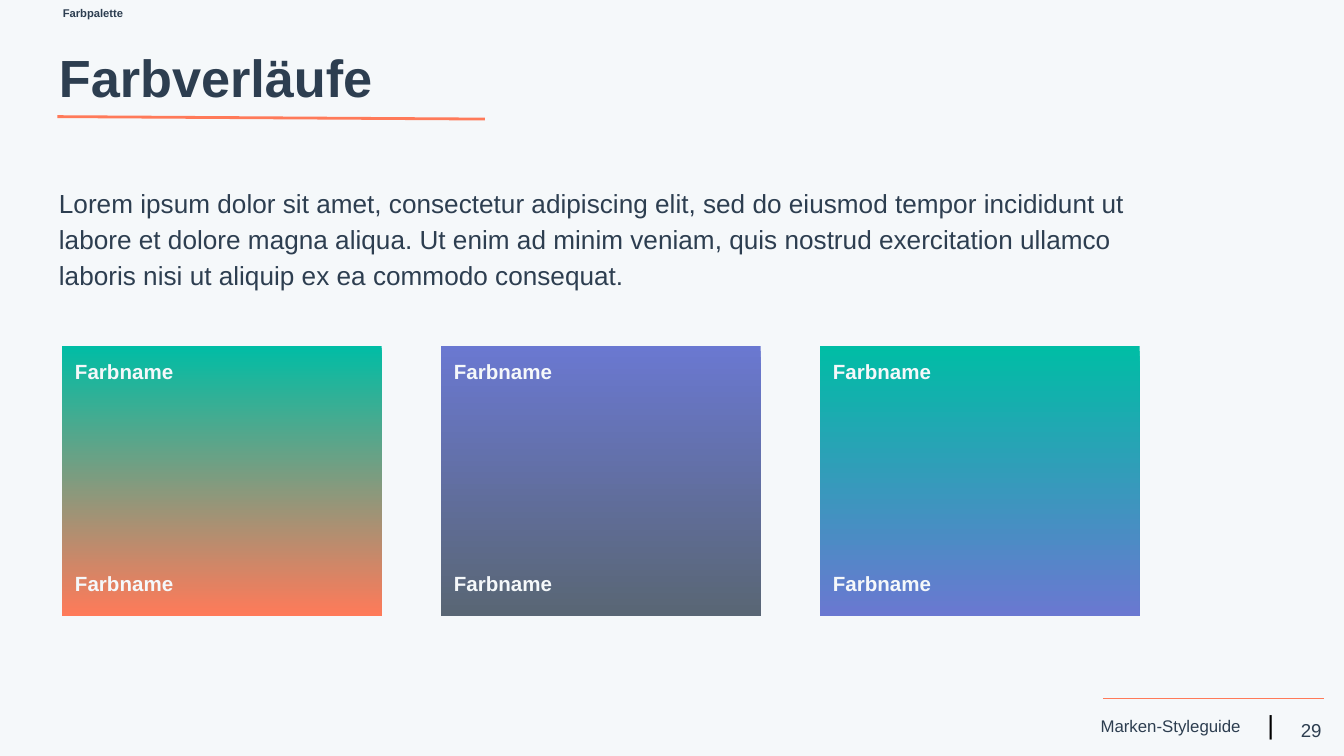
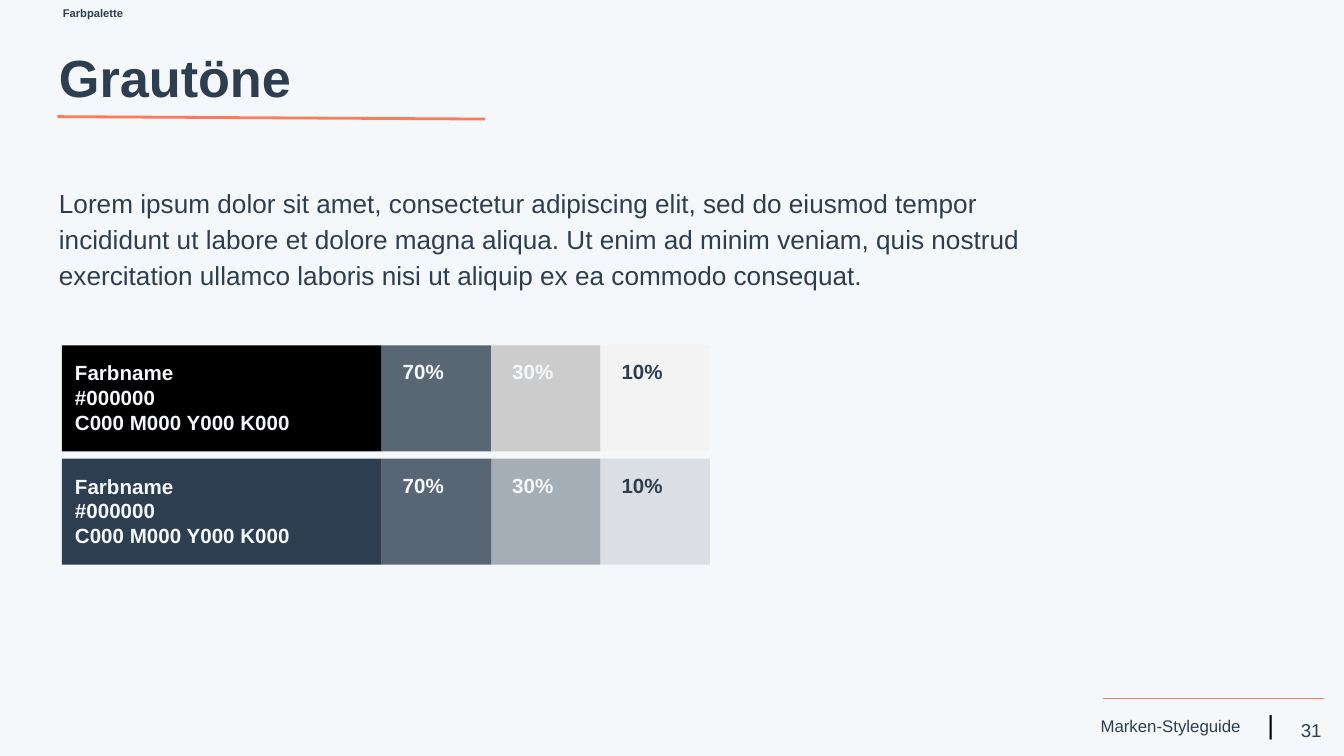
from pptx import Presentation
from pptx.dml.color import RGBColor
from pptx.enum.shapes import MSO_CONNECTOR, MSO_SHAPE
from pptx.enum.text import MSO_ANCHOR, PP_ALIGN
from pptx.oxml.ns import qn
from pptx.util import Pt
from lxml.etree import SubElement

rgb = RGBColor.from_string

FONT = "Arial"
PAPER = "F5F8FA"
NAVY = "2D3E50"
CORAL = "FF7A59"
TEAL = "00BDA5"
VIOLET = "6A78D1"
SLATE = "596674"
BLACK = "000000"

LOREM = (
    "Lorem ipsum dolor sit amet, consectetur adipiscing elit, sed do eiusmod tempor "
    "incididunt ut labore et dolore magna aliqua. Ut enim ad minim veniam, quis nostrud "
    "exercitation ullamco laboris nisi ut aliquip ex ea commodo consequat."
)
GRID_LEFT, GRID_TOP = 33.1, 185.1
SWATCH_WIDTH = 171.4
LABEL_WIDTH, LABEL_HEIGHT = 175.7, 31
LABEL_INSET = 0.8


def add_text(slide, lines, left, top, width, height, size, color=NAVY, bold=False,
             anchor=MSO_ANCHOR.TOP, align=PP_ALIGN.LEFT, spacing=1.0, after=0):
    shape = slide.shapes.add_textbox(Pt(left), Pt(top), Pt(width), Pt(height))
    frame = shape.text_frame
    frame.word_wrap = True
    frame.vertical_anchor = anchor
    frame.margin_left = frame.margin_right = Pt(7.2)
    frame.margin_top = frame.margin_bottom = Pt(7.2)
    frame.text = "\n".join(lines)
    for paragraph in frame.paragraphs:
        paragraph.alignment = align
        paragraph.line_spacing = spacing
        paragraph.space_after = Pt(after)
        paragraph.font.name = FONT
        paragraph.font.size = Pt(size)
        paragraph.font.bold = bold
        paragraph.font.color.rgb = rgb(color)


def add_swatch(slide, left, top, width, height, colors, opacity=100):
    shape = slide.shapes.add_shape(
        MSO_SHAPE.RECTANGLE, Pt(left), Pt(top), Pt(width), Pt(height))
    shape.shadow.inherit = False
    shape.line.fill.background()
    if len(colors) == 2:
        shape.fill.gradient()
        shape.fill.gradient_angle = 270
        for stop, color in zip(shape.fill.gradient_stops, colors):
            stop.color.rgb = rgb(color)
    else:
        shape.fill.solid()
        shape.fill.fore_color.rgb = rgb(colors[0])
    if opacity < 100:
        fill_color = shape.element.spPr.find(qn("a:solidFill"))[0]
        SubElement(fill_color, qn("a:alpha")).set("val", str(opacity * 1000))


presentation = Presentation()
presentation.slide_width = Pt(720)
presentation.slide_height = Pt(405)
background = presentation.slide_master.background.fill
background.solid()
background.fore_color.rgb = rgb(PAPER)

slides = []
for title, number, body_width in [("Farbverläufe", "29", 586), ("Grautöne", "31", 561)]:
    slide = presentation.slides.add_slide(presentation.slide_layouts[6])
    slides.append(slide)
    add_text(slide, ["Marken-Styleguide"], 582.5, 375.8, 109.4, 26.6, 9,
             anchor=MSO_ANCHOR.MIDDLE)
    add_text(slide, ["|"], 671.8, 372.2, 20.9, 26.6, 14, BLACK)
    for x1, y1, x2, y2, weight in [(591, 374.2, 709.2, 374.2, 0.75),
                                   (30.8, 62.5, 259.8, 63.8, 1.5)]:
        rule = slide.shapes.add_connector(
            MSO_CONNECTOR.STRAIGHT, Pt(x1), Pt(y1), Pt(x2), Pt(y2))
        rule.line.color.rgb = rgb(CORAL)
        rule.line.width = Pt(weight)
        SubElement(rule.element.spPr, qn("a:effectLst"))
    add_text(slide, [title], 24.5, 17.3, 671, 45.4, 28, bold=True)
    add_text(slide, [LOREM], 24.5, 90.7, body_width, 68, 14, spacing=1.15, after=16)
    add_text(slide, [number], 671.8, 375.8, 43.2, 31, 10,
             anchor=MSO_ANCHOR.MIDDLE, align=PP_ALIGN.RIGHT)
    add_text(slide, ["Farbpalette"], 26.6, 0, 160, 17.3, 6, bold=True)

gradient_slide, gray_slide = slides

for column, gradient in enumerate([(TEAL, CORAL), (VIOLET, SLATE), (TEAL, VIOLET)]):
    left = GRID_LEFT + column * 203
    add_swatch(gradient_slide, left, GRID_TOP, SWATCH_WIDTH, 145, gradient)
    for label_top in (GRID_TOP + LABEL_INSET, 299.2):
        add_text(gradient_slide, ["Farbname"], left, label_top,
                 LABEL_WIDTH, LABEL_HEIGHT, 11, PAPER, True)

gray_rows = [
    (BLACK, [(SLATE, 100), ("CCCCCC", 100), ("F3F3F3", 100)]),
    (NAVY, [(NAVY, 79), (NAVY, 40), (NAVY, 13)]),
]
tint_labels = [("70%", PAPER), ("30%", PAPER), ("10%", NAVY)]
for row, (base, tints) in enumerate(gray_rows):
    top = GRID_TOP + row * 60.7
    add_swatch(gray_slide, GRID_LEFT, top, SWATCH_WIDTH, 56.8, [base])
    add_text(gray_slide, ["Farbname", "#000000", "C000 M000 Y000 K000"], GRID_LEFT,
             top + LABEL_INSET, LABEL_WIDTH, LABEL_HEIGHT, 11, PAPER, True)
    for column, ((tint, opacity), (label, color)) in enumerate(zip(tints, tint_labels)):
        left = GRID_LEFT + SWATCH_WIDTH + column * 58.6
        add_swatch(gray_slide, left, top, 58.6, 56.8, [tint], opacity)
        add_text(gray_slide, [label], left + 4.2, top + LABEL_INSET,
                 54.7, LABEL_HEIGHT, 11, color, True)

presentation.save("out.pptx")
